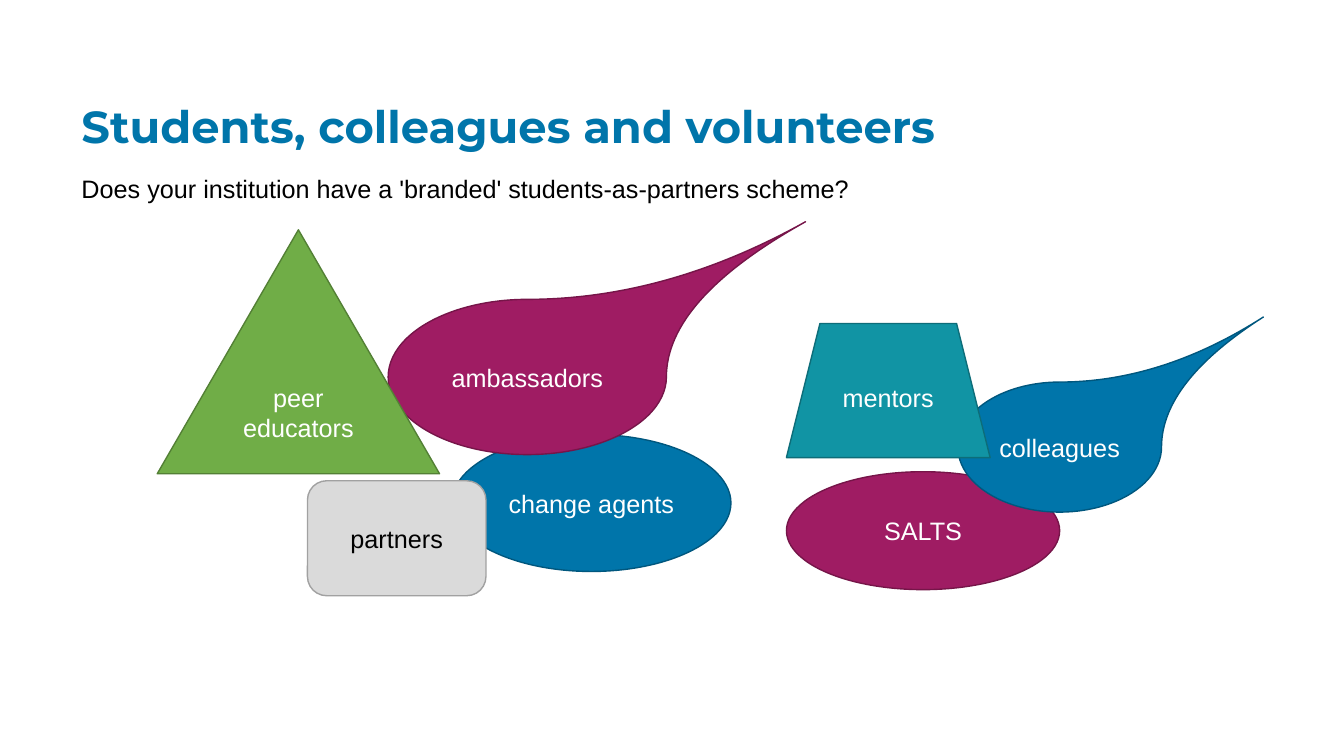
from dataclasses import dataclass

from pptx import Presentation
from pptx.dml.color import RGBColor
from pptx.enum.shapes import MSO_SHAPE
from pptx.enum.text import MSO_ANCHOR, PP_ALIGN
from pptx.util import Inches, Pt


@dataclass(frozen=True)
class Theme:
    heading_font: str = "Montserrat"
    body_font: str = "Arial"
    heading_size: int = 32
    body_size: int = 18
    line_width: int = 1
    white: str = "FFFFFF"
    black: str = "000000"
    blue: str = "0075AA"
    # Fill and outline pairs
    blue_pair: tuple = ("0075AA", "00577E")
    plum_pair: tuple = ("9F1C63", "761549")
    grey_pair: tuple = ("DADADA", "A1A1A1")
    teal_pair: tuple = ("1194A4", "0D6D79")
    green_pair: tuple = ("70AD47", "538035")


theme = Theme()


def add_run(paragraph, text, color, font=theme.body_font, size=theme.body_size, bold=False):
    run = paragraph.add_run()
    run.text = text
    run.font.name = font
    run.font.size = Pt(size)
    run.font.bold = bold
    run.font.color.rgb = RGBColor.from_string(color)


def add_text_line(slide, left, top, width, height):
    """Add a wrapping text box and return its first paragraph."""
    box = slide.shapes.add_textbox(Inches(left), Inches(top), Inches(width), Inches(height))
    box.text_frame.word_wrap = True
    return box.text_frame.paragraphs[0]


presentation = Presentation()
presentation.slide_width = Inches(13.33)
presentation.slide_height = Inches(7.5)
slide = presentation.slides.add_slide(presentation.slide_layouts[6])

title = add_text_line(slide, 0.71, 0.99, 11.5, 0.69)
title.line_spacing = 0.9
add_run(title, "Students, colleagues and volunteers", theme.blue,
        theme.heading_font, theme.heading_size, bold=True)

# Roles from back to front: label, preset, left, top, width, height, colours, text colour
roles = [
    ("change agents", MSO_SHAPE.OVAL, 4.48, 4.31, 2.77, 1.36, theme.blue_pair, theme.white),
    ("SALTS", MSO_SHAPE.OVAL, 7.8, 4.68, 2.71, 1.17, theme.plum_pair, theme.white),
    ("partners", MSO_SHAPE.ROUNDED_RECTANGLE, 3.05, 4.77, 1.77, 1.14, theme.grey_pair, theme.black),
    ("colleagues", MSO_SHAPE.TEAR, 9.5, 3.79, 2.02, 1.29, theme.blue_pair, theme.white),
    ("mentors", MSO_SHAPE.TRAPEZOID, 7.8, 3.21, 2.02, 1.33, theme.teal_pair, theme.white),
    ("ambassadors", MSO_SHAPE.TEAR, 3.85, 2.97, 2.76, 1.54, theme.plum_pair, theme.white),
    ("peer educators", MSO_SHAPE.ISOSCELES_TRIANGLE, 1.56, 2.28, 2.8, 2.42,
     theme.green_pair, theme.white),
]
for label, preset, left, top, width, height, (fill, outline), text_color in roles:
    shape = slide.shapes.add_shape(
        preset, Inches(left), Inches(top), Inches(width), Inches(height))
    if preset == MSO_SHAPE.TEAR:
        shape.adjustments[0] = 2
    shape.shadow.inherit = False
    shape.fill.solid()
    shape.fill.fore_color.rgb = RGBColor.from_string(fill)
    shape.line.color.rgb = RGBColor.from_string(outline)
    shape.line.width = Pt(theme.line_width)
    shape.text_frame.word_wrap = True
    shape.text_frame.vertical_anchor = MSO_ANCHOR.MIDDLE
    paragraph = shape.text_frame.paragraphs[0]
    paragraph.alignment = PP_ALIGN.CENTER
    add_run(paragraph, label, text_color)

question = add_text_line(slide, 0.71, 1.67, 10.49, 0.4)
add_run(question, "Does your institution have a 'branded' students-as-partners scheme?", theme.black)

presentation.save("out.pptx")
